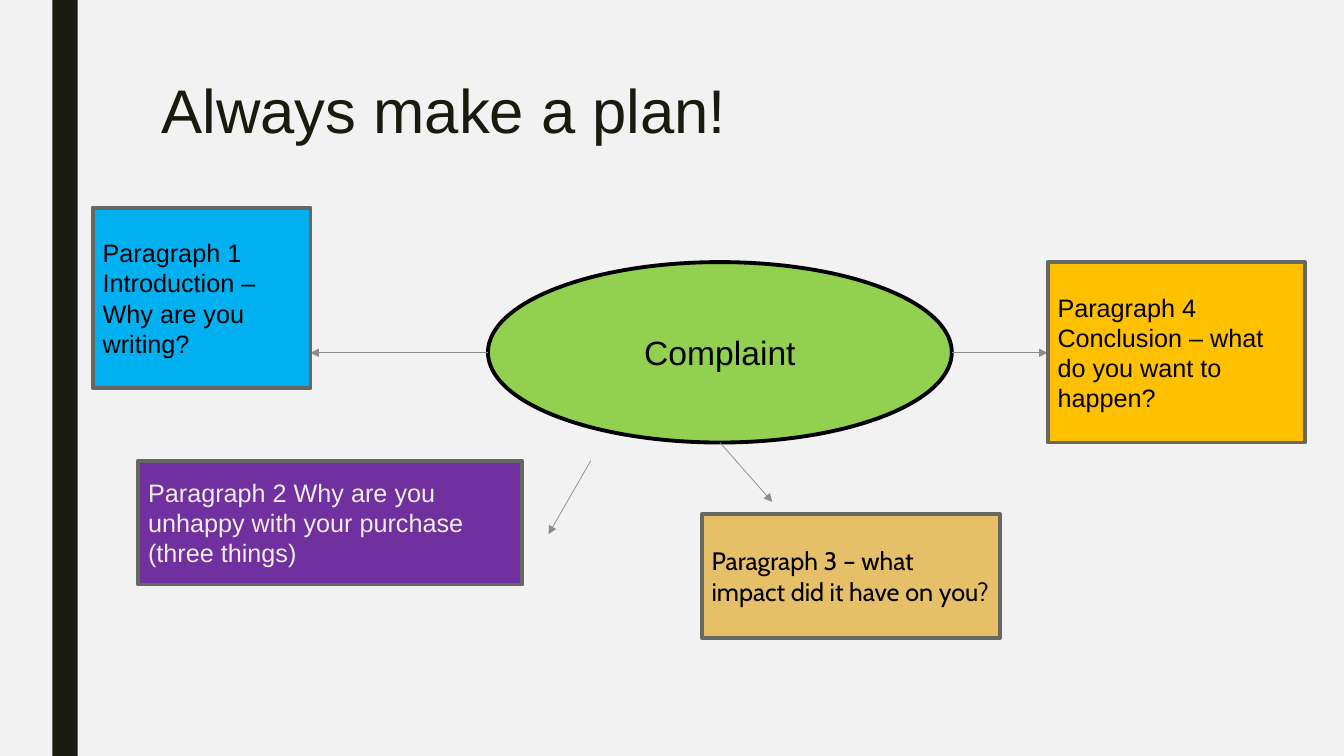
import pptx
import pptx.dml.color
import pptx.enum.shapes
import pptx.enum.text
import pptx.oxml.ns
import pptx.util
from lxml import etree
from pptx.util import Inches

RGBColor = pptx.dml.color.RGBColor
Shape = pptx.enum.shapes.MSO_SHAPE
Align = pptx.enum.text.PP_ALIGN
Anchor = pptx.enum.text.MSO_ANCHOR

PAPER = RGBColor(0xF2, 0xF2, 0xF2)
INK = RGBColor(0x19, 0x1B, 0x0E)
BLACK = RGBColor(0x00, 0x00, 0x00)
CREAM = RGBColor(0xEF, 0xED, 0xE3)
BORDER = RGBColor(0x68, 0x68, 0x63)
ARROW = RGBColor(0x8C, 0x8D, 0x86)
GREEN = RGBColor(0x92, 0xD0, 0x50)
BLUE = RGBColor(0x00, 0xB0, 0xF0)
PURPLE = RGBColor(0x70, 0x30, 0xA0)
SAND = RGBColor(0xE6, 0xC0, 0x69)
GOLD = RGBColor(0xFF, 0xC0, 0x00)

PLAN_BOXES = [
    ((0.92, 2.06, 2.16, 1.79), BLUE, BLACK, "Arial",
     ["Paragraph 1", "Introduction – Why are you writing?"]),
    ((1.37, 4.57, 3.81, 1.23), PURPLE, CREAM, "Arial",
     ["Paragraph 2 Why are you unhappy with your purchase (three things)"]),
    ((6.96, 5.1, 2.96, 1.23), SAND, BLACK, "Cabin",
     ["Paragraph 3 – what impact did it have on you?"]),
    ((10.39, 2.6, 2.55, 1.79), GOLD, BLACK, "Arial",
     ["Paragraph 4", "Conclusion – what do you want to happen?"]),
]

ARROWS = [
    ((4.84, 3.5), (3.08, 3.5)),
    ((5.86, 4.57), (5.44, 5.3)),
    ((7.14, 4.39), (7.66, 4.98)),
    ((9.44, 3.5), (10.39, 3.5)),
]


def set_font(para, name, size, color):
    para.font.name = name
    para.font.size = pptx.util.Pt(size)
    para.font.color.rgb = color


def add_filled_shape(page, kind, area, fill):
    shape = page.shapes.add_shape(kind, *map(Inches, area))
    shape.shadow.inherit = False
    shape.fill.solid()
    shape.fill.fore_color.rgb = fill
    return shape


def add_title(page, text):
    title = page.shapes.title
    title.left, title.top, title.width, title.height = map(
        Inches, (1.5, 0.75, 10.5, 1.62))
    title.text_frame.vertical_anchor = Anchor.TOP
    title.text_frame.text = text
    para = title.text_frame.paragraphs[0]
    para.alignment = Align.LEFT
    para.line_spacing = 0.89
    set_font(para, "Arial", 44, INK)


def add_plan_shape(page, kind, area, fill, border, lines, font, size, color,
                   alignment):
    shape = add_filled_shape(page, kind, area, fill)
    shape.line.color.rgb = border
    shape.line.width = pptx.util.Pt(2.75)
    frame = shape.text_frame
    frame.word_wrap = True
    frame.vertical_anchor = Anchor.MIDDLE
    frame.text = "\n".join(lines)
    for para in frame.paragraphs:
        para.alignment = alignment
        set_font(para, font, size, color)


def add_arrow(page, start, end):
    arrow = page.shapes.add_connector(
        pptx.enum.shapes.MSO_CONNECTOR.STRAIGHT, *map(Inches, start + end))
    arrow.line.color.rgb = ARROW
    arrow.line.width = pptx.util.Pt(0.5)
    properties = arrow.element.spPr
    outline = properties.find(pptx.oxml.ns.qn("a:ln"))
    etree.SubElement(outline, pptx.oxml.ns.qn("a:tailEnd"), type="triangle")
    etree.SubElement(properties, pptx.oxml.ns.qn("a:effectLst"))


def main():
    deck = pptx.Presentation()
    deck.slide_width, deck.slide_height = Inches(13.33), Inches(7.5)
    page = deck.slides.add_slide(deck.slide_layouts.get_by_name("Title Only"))
    page.background.fill.solid()
    page.background.fill.fore_color.rgb = PAPER

    side_bar = add_filled_shape(page, Shape.RECTANGLE, (0.52, 0, 0.25, 7.5), INK)
    side_bar.line.fill.background()
    add_title(page, "Always make a plan!")
    add_plan_shape(page, Shape.OVAL, (4.84, 2.6, 4.6, 1.79), GREEN, BLACK,
                   ["Complaint"], "Arial", 24, BLACK, Align.CENTER)
    for start, end in ARROWS:
        add_arrow(page, start, end)
    for area, fill, color, font, lines in PLAN_BOXES:
        add_plan_shape(page, Shape.RECTANGLE, area, fill, BORDER,
                       lines, font, 18, color, Align.LEFT)

    deck.save("out.pptx")


if __name__ == "__main__":
    main()
